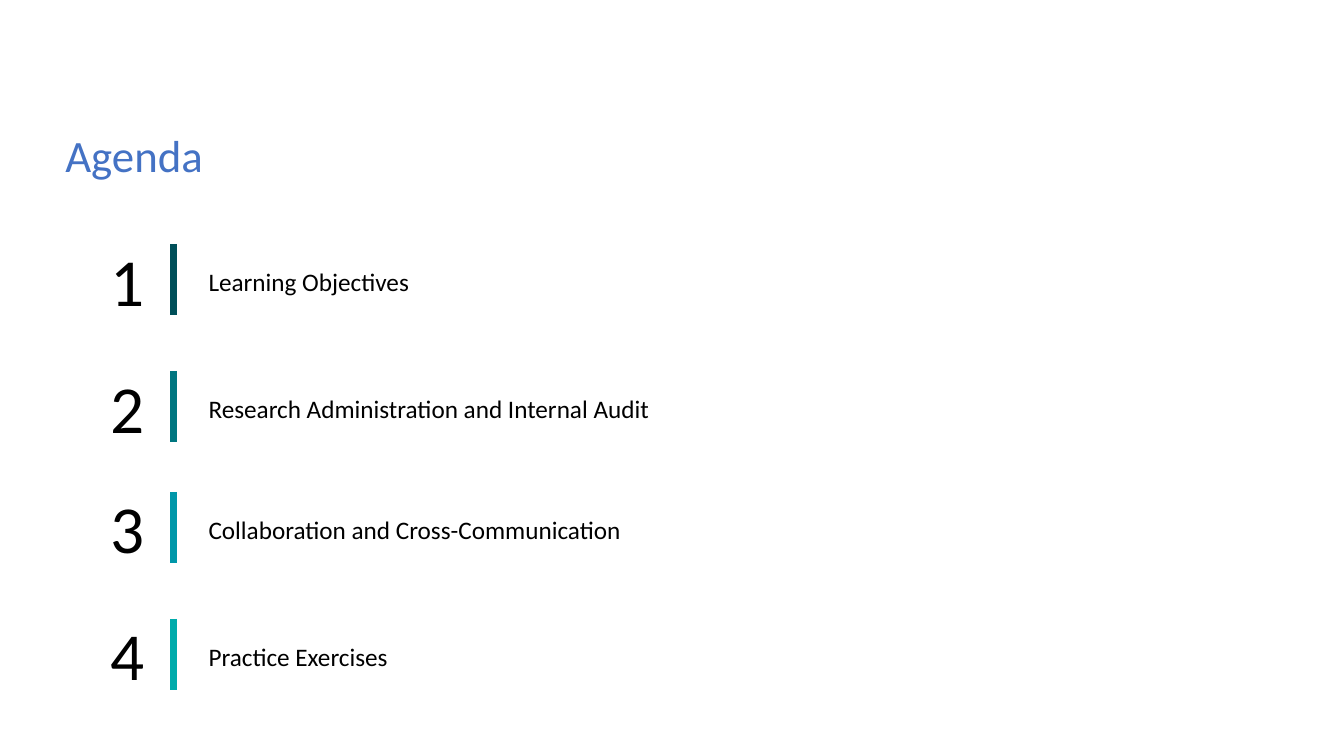
from lxml import etree
from pptx import Presentation
from pptx.dml.color import RGBColor
from pptx.enum.shapes import MSO_CONNECTOR
from pptx.enum.text import MSO_AUTO_SIZE
from pptx.oxml.ns import qn
from pptx.util import Inches, Pt

STRAIGHT = MSO_CONNECTOR.STRAIGHT
FIT_SHAPE = MSO_AUTO_SIZE.SHAPE_TO_FIT_TEXT
NO_FIT = MSO_AUTO_SIZE.NONE

FONT = "Calibri"
TITLE = "Agenda"
AGENDA = [
    ("Learning Objectives", 2.32, 2.22, "004F59"),
    ("Research Administration and Internal Audit", 3.58, 4.62, "007680"),
    ("Collaboration and Cross-Communication", 4.78, 4.34, "0097A9"),
    ("Practice Exercises", 6.04, 2.0, "00ABAB"),
]
NUMBER_LEFT, BAR_LEFT, TOPIC_LEFT = 1.0, 1.72, 1.97
BAR_OFFSET, BAR_HEIGHT, TOPIC_OFFSET = 0.1, 0.71, 0.27


def color(value):
    return RGBColor.from_string(value)


def add_text(parent, text, left, top, width, height, size, ink="000000", wrap=False):
    box = parent.shapes.add_textbox(Inches(left), Inches(top), Inches(width), Inches(height))
    frame = box.text_frame
    frame.word_wrap = wrap
    frame.auto_size = NO_FIT if wrap else FIT_SHAPE
    frame.text = text
    para = frame.paragraphs[0]
    font = para.runs[0].font
    font.name, font.size = FONT, Pt(size)
    font.color.rgb = color(ink)
    return para


def add_bar(parent, left, top, height, ink):
    bar = parent.shapes.add_connector(
        STRAIGHT, Inches(left), Inches(top), Inches(left), Inches(top + height))
    bar.line.color.rgb = color(ink)
    bar.line.width = Pt(5)
    etree.SubElement(bar._element.spPr, qn("a:effectLst"))


def main():
    deck = Presentation()
    deck.slide_width, deck.slide_height = Inches(13.33), Inches(7.5)
    page = deck.slides.add_slide(deck.slide_layouts[6])
    for number, (topic, top, width, ink) in enumerate(AGENDA, 1):
        entry = page.shapes.add_group_shape()
        add_text(entry, str(number), NUMBER_LEFT, top, 0.54, 0.91, 48)
        add_text(entry, topic, TOPIC_LEFT, top + TOPIC_OFFSET, width, 0.4, 18)
        add_bar(entry, BAR_LEFT, top + BAR_OFFSET, BAR_HEIGHT, ink)
    heading = add_text(page, TITLE, 0.55, 1.28, 12.24, 0.49, 32, "4472C4", wrap=True)
    heading.line_spacing = 0.9
    deck.save("out.pptx")


if __name__ == "__main__":
    main()
